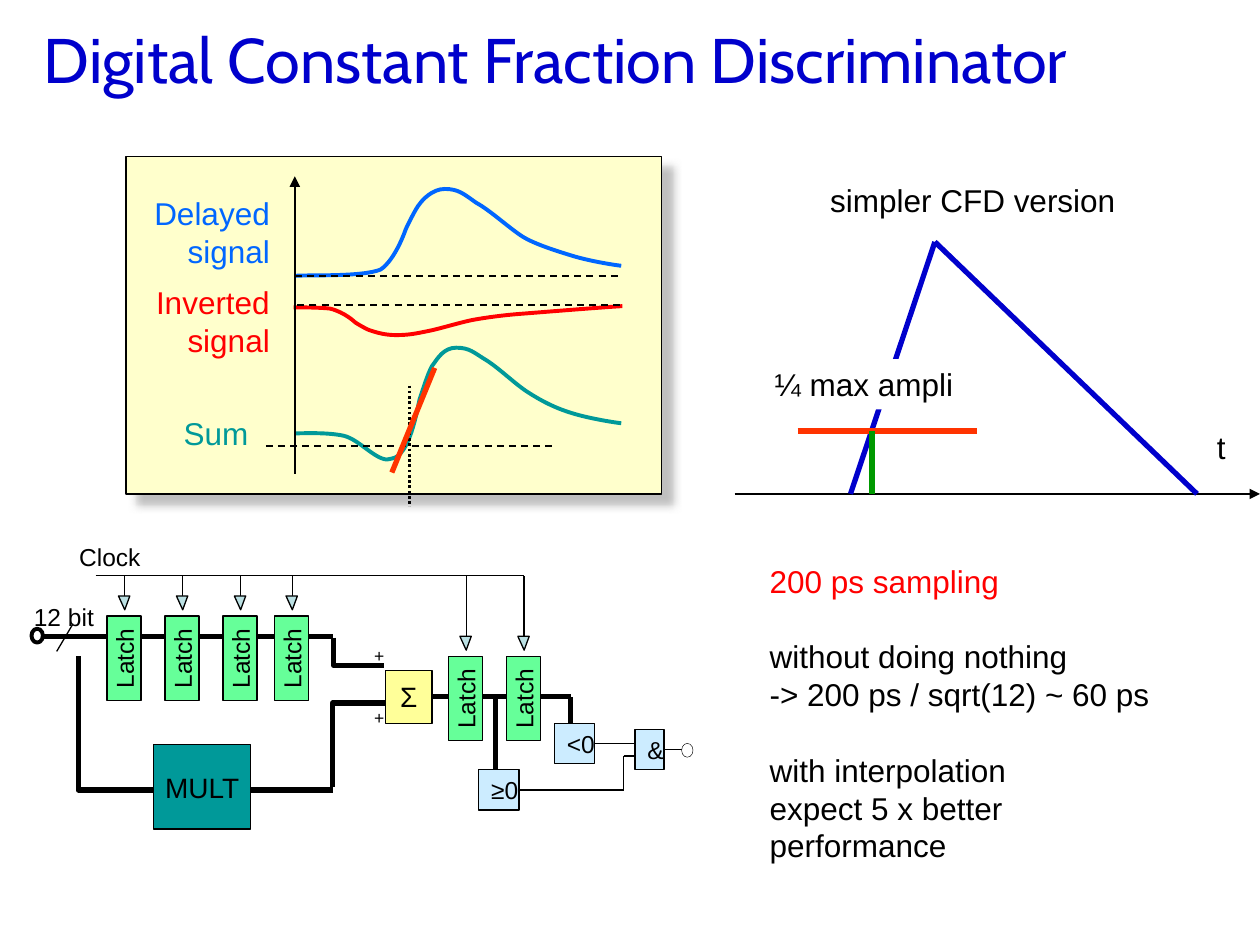
from dataclasses import dataclass

from lxml.etree import SubElement
from pptx import Presentation
from pptx.dml.color import RGBColor
from pptx.enum.dml import MSO_LINE
from pptx.enum.shapes import MSO_CONNECTOR, MSO_SHAPE
from pptx.enum.text import MSO_ANCHOR, MSO_AUTO_SIZE, PP_ALIGN
from pptx.oxml.ns import qn
from pptx.util import Inches, Pt


@dataclass(frozen=True)
class Theme:
    font: str = "Arial"
    title_font: str = "Cabin"
    title: int = 36
    body: int = 18
    block: int = 16
    small: int = 14
    sign: int = 10
    gap: float = 21.6
    thin: float = 0.75
    thick: float = 3
    black: str = "000000"
    white: str = "FFFFFF"
    navy: str = "0000CC"
    blue: str = "0066FF"
    red: str = "FF0000"
    teal: str = "009999"
    orange: str = "FF3300"
    green: str = "009900"
    panel: str = "FFFFCC"
    latch: str = "66FF99"
    sum: str = "FFFF99"
    logic: str = "CCECFF"
    clock: str = "BBE0E3"
    shadow: str = "808080"


T = Theme()
rgb = RGBColor.from_string


def write(tf, lines, size, color, align=PP_ALIGN.LEFT, font=T.font):
    """Each line is a text, or a (text, color, space before) tuple."""
    for i, line in enumerate(lines):
        text, ink, before = line if isinstance(line, tuple) else (line, color, 0)
        p = tf.paragraphs[0] if i == 0 else tf.add_paragraph()
        p.alignment = align
        if before:
            p.space_before = Pt(before)
        r = p.add_run()
        r.text = text
        r.font.name, r.font.size = font, Pt(size)
        r.font.color.rgb = rgb(ink)


def add_label(s, box, lines, size=T.body, color=T.black, align=PP_ALIGN.LEFT):
    sp = s.shapes.add_textbox(*map(Inches, box))
    tf = sp.text_frame
    tf.word_wrap = False
    tf.auto_size = MSO_AUTO_SIZE.SHAPE_TO_FIT_TEXT
    write(tf, lines, size, color, align)
    return sp


def style(sp, fill=None, line=T.black, width=T.thin):
    sp.shadow.inherit = False
    if fill:
        sp.fill.solid()
        sp.fill.fore_color.rgb = rgb(fill)
    else:
        sp.fill.background()
    sp.line.color.rgb = rgb(line)
    sp.line.width = Pt(width)


def add_block(s, box, fill, text="", size=T.small, align=PP_ALIGN.CENTER,
              inset=0, vertical=False, shape=MSO_SHAPE.RECTANGLE, width=T.thin):
    sp = s.shapes.add_shape(shape, *map(Inches, box))
    style(sp, fill, width=width)
    if text:
        tf = sp.text_frame
        tf.word_wrap = False
        tf.vertical_anchor = MSO_ANCHOR.MIDDLE
        tf.margin_left = Inches(inset)
        tf.margin_right = tf.margin_top = tf.margin_bottom = 0
        if vertical:
            tf._txBody.bodyPr.set("vert", "vert270")
        write(tf, [text], size, T.black, align)
    return sp


def add_line(s, x1, y1, x2, y2, color=T.black, width=T.thin, dash=None,
             arrow=False, start=None):
    """start is a block whose right side the line leaves from."""
    c = s.shapes.add_connector(MSO_CONNECTOR.STRAIGHT, *map(Inches, (x1, y1, x2, y2)))
    c.line.color.rgb = rgb(color)
    c.line.width = Pt(width)
    if dash:
        c.line.dash_style = dash
    spPr = c._element.spPr
    if arrow:
        SubElement(spPr.find(qn("a:ln")), qn("a:tailEnd"), type="triangle")
    SubElement(spPr, qn("a:effectLst"))
    if start:
        c.begin_connect(start, 3)


def add_path(s, points, color=T.black, width=T.thick, fill=None):
    pts = [(Inches(x), Inches(y)) for x, y in points]
    builder = s.shapes.build_freeform(*pts[0])
    builder.add_line_segments(pts[1:], close=bool(fill))
    sp = builder.convert_to_shape()
    style(sp, fill, color, width)
    return sp


def add_curve(s, start, segments, color):
    """Draw cubic Bezier segments given as x1, y1, x2, y2, x3, y3."""
    points = [start] + [seg[i:i + 2] for seg in segments for i in (0, 2, 4)]
    sp = add_path(s, points, color, 2.25)
    # Join every three straight steps into one Bezier segment
    outline = next(sp._element.iter(qn("a:path")))
    steps = outline.findall(qn("a:lnTo"))
    for i in range(0, len(steps), 3):
        bezier = SubElement(outline, qn("a:cubicBezTo"))
        for step in steps[i:i + 3]:
            bezier.append(step[0])
            outline.remove(step)


def add_signal_panel(s):
    panel = add_block(s, (1, 1.24, 4.25, 2.68), T.panel)
    effects = panel._element.spPr.find(qn("a:effectLst"))
    shadow = SubElement(effects, qn("a:outerShdw"), blurRad=str(Pt(5)),
                        dist=str(Pt(8.5)), dir="2700000", algn="ctr", rotWithShape="0")
    ink = SubElement(shadow, qn("a:srgbClr"), val=T.shadow)
    SubElement(ink, qn("a:alpha"), val="50000")

    # Delayed, inverted and summed signals
    add_curve(s, (2.34, 2.19), [
        (2.45, 2.18, 2.87, 2.2, 3.02, 2.14), (3.14, 2.06, 3.22, 1.82, 3.22, 1.82),
        (3.22, 1.82, 3.3, 1.65, 3.33, 1.62), (3.35, 1.59, 3.43, 1.5, 3.53, 1.5),
        (3.64, 1.5, 3.68, 1.54, 3.78, 1.61), (3.89, 1.67, 4.04, 1.81, 4.15, 1.88),
        (4.25, 1.94, 4.41, 1.99, 4.54, 2.03), (4.67, 2.07, 4.85, 2.1, 4.93, 2.11)], T.blue)
    add_curve(s, (2.33, 2.44), [
        (2.38, 2.44, 2.54, 2.44, 2.62, 2.45), (2.74, 2.48, 2.82, 2.56, 2.82, 2.56),
        (2.82, 2.56, 2.9, 2.61, 2.93, 2.62), (2.96, 2.63, 3.04, 2.66, 3.14, 2.66),
        (3.24, 2.66, 3.29, 2.65, 3.39, 2.63), (3.49, 2.61, 3.65, 2.56, 3.75, 2.54),
        (3.86, 2.52, 4.01, 2.5, 4.15, 2.49), (4.28, 2.48, 4.77, 2.44, 4.94, 2.43)], T.red)
    add_curve(s, (2.34, 3.44), [
        (2.4, 3.44, 2.6, 3.43, 2.73, 3.46), (2.86, 3.49, 3.01, 3.69, 3.11, 3.64),
        (3.25, 3.62, 3.31, 3.26, 3.33, 3.17), (3.36, 3.08, 3.41, 2.92, 3.44, 2.89),
        (3.47, 2.85, 3.52, 2.76, 3.62, 2.76), (3.73, 2.76, 3.76, 2.8, 3.86, 2.86),
        (3.97, 2.93, 4.1, 3.06, 4.2, 3.12), (4.31, 3.19, 4.41, 3.24, 4.54, 3.28),
        (4.67, 3.32, 4.85, 3.35, 4.93, 3.36)], T.teal)

    # Axis, baselines and zero crossing
    add_line(s, 2.34, 3.76, 2.34, 1.4, width=1, arrow=True)
    for x1, x2, y in [(2.36, 4.96, 2.42), (2.34, 4.93, 2.19), (2.11, 4.42, 3.54)]:
        add_line(s, x1, y, x2, y, width=1, dash=MSO_LINE.DASH)
    add_line(s, 3.25, 3.06, 3.25, 4.02, width=1.5, dash=MSO_LINE.ROUND_DOT)
    add_line(s, 3.45, 2.92, 3.11, 3.75, T.orange, T.thick)

    for box, lines, color in [
            ((1.12, 1.49, 1.12, 0.7), ["Delayed", "signal"], T.blue),
            ((1.14, 2.2, 1.1, 0.7), ["Inverted", "signal"], T.red),
            ((1.35, 3.24, 0.72, 0.4), ["Sum"], T.teal)]:
        add_label(s, box, lines, color=color, align=PP_ALIGN.RIGHT)


def add_circuit(s):
    # Data lines
    adder = add_block(s, (3.06, 5.32, 0.37, 0.42), T.sum, "Σ", T.block)
    add_line(s, 3.43, 5.53, 4.53, 5.53, width=T.thick, start=adder)
    add_line(s, 0.34, 5.05, 2.64, 5.05, width=T.thick)
    add_path(s, [(2.65, 5.06), (2.65, 5.28), (3.05, 5.28)])
    add_path(s, [(2.64, 6.25), (2.64, 5.58), (3.06, 5.58)])
    add_path(s, [(2.64, 6.27), (0.62, 6.27), (0.62, 5.21)])
    add_line(s, 4.53, 5.74, 4.53, 5.53, width=T.thick)
    add_line(s, 3.93, 6.11, 3.93, 5.53, width=T.thick)
    add_line(s, 0.58, 4.95, 0.45, 5.17)
    add_block(s, (1.22, 5.91, 0.77, 0.67), T.teal, "MULT", T.block)

    # Clock line with a drop to each latch
    add_line(s, 0.76, 4.57, 4.16, 4.57)
    for x, tip_top in [(0.99, 4.73), (1.45, 4.73), (1.91, 4.73), (2.32, 4.73),
                       (3.7, 5.05), (4.16, 5.05)]:
        add_line(s, x, 4.57, x, tip_top)
        add_path(s, [(x - 0.05, tip_top), (x, tip_top + 0.11), (x + 0.04, tip_top)],
                 width=T.thin, fill=T.clock)
        add_block(s, (x - 0.14, tip_top + 0.16, 0.27, 0.67), T.latch, "Latch", vertical=True)

    # Comparators and AND gate
    not_negative, negative, gate = [
        add_block(s, box, T.logic, text, align=PP_ALIGN.LEFT, inset=0.1)
        for box, text in [((3.8, 6.11, 0.32, 0.32), "≥0"),
                          ((4.4, 5.74, 0.32, 0.32), "<0"),
                          ((5.04, 5.79, 0.23, 0.32), "&")]]
    add_line(s, 4.12, 6.27, 4.95, 6.27, start=not_negative)
    add_line(s, 4.95, 6.27, 4.95, 6)
    add_line(s, 4.95, 6, 5.04, 6)
    add_line(s, 4.72, 5.9, 5.04, 5.9, start=negative)
    add_line(s, 5.27, 5.95, 5.45, 5.95, start=gate)

    # Input and output terminals
    for x, y, width in [(0.25, 4.99, 2.25), (5.41, 5.9, 0.25)]:
        add_block(s, (x, y, 0.09, 0.11), T.white, shape=MSO_SHAPE.OVAL, width=width)

    for box, text, size in [((0.17, 4.73, 0.68, 0.33), "12 bit", T.small),
                            ((0.53, 4.25, 0.69, 0.33), "Clock", T.small),
                            ((2.87, 5.07, 0.28, 0.27), "+", T.sign),
                            ((2.87, 5.56, 0.28, 0.27), "+", T.sign)]:
        add_label(s, box, [text], size)


def add_simple_version(s):
    add_line(s, 5.83, 3.92, 10, 3.92, arrow=True)
    for ends, color in [((6.75, 3.92, 7.42, 1.92), T.navy), ((7.42, 1.92, 9.5, 3.92), T.navy),
                        ((6.33, 3.42, 7.75, 3.42), T.orange), ((6.92, 3.42, 6.92, 3.92), T.green)]:
        add_line(s, *ends, color, T.thick)
    add_label(s, (9.56, 3.35, 0.27, 0.4), ["t"])
    threshold = add_label(s, (6.05, 2.85, 1.62, 0.4), ["¼ max ampli"])
    threshold.fill.solid()
    threshold.fill.fore_color.rgb = rgb(T.white)
    add_label(s, (6.49, 1.39, 2.49, 0.4), ["simpler CFD version"])
    add_label(s, (6.01, 4.41, 3.24, 2.52), [
        ("200 ps sampling", T.red, 0),
        ("without doing nothing", T.black, T.gap), "-> 200 ps / sqrt(12) ~ 60 ps",
        ("with interpolation", T.black, T.gap), "expect 5 x better", "performance"])


def main():
    prs = Presentation()
    prs.slide_width, prs.slide_height = Inches(10), Inches(7.5)
    s = prs.slides.add_slide(prs.slide_layouts[6])

    # Title
    tf = s.shapes.add_textbox(*map(Inches, (0.25, 0, 9.75, 0.92))).text_frame
    tf.word_wrap = True
    tf.vertical_anchor = MSO_ANCHOR.MIDDLE
    write(tf, ["Digital Constant Fraction Discriminator"], T.title, T.navy, font=T.title_font)

    add_signal_panel(s)
    add_circuit(s)
    add_simple_version(s)
    prs.save("out.pptx")


if __name__ == "__main__":
    main()
